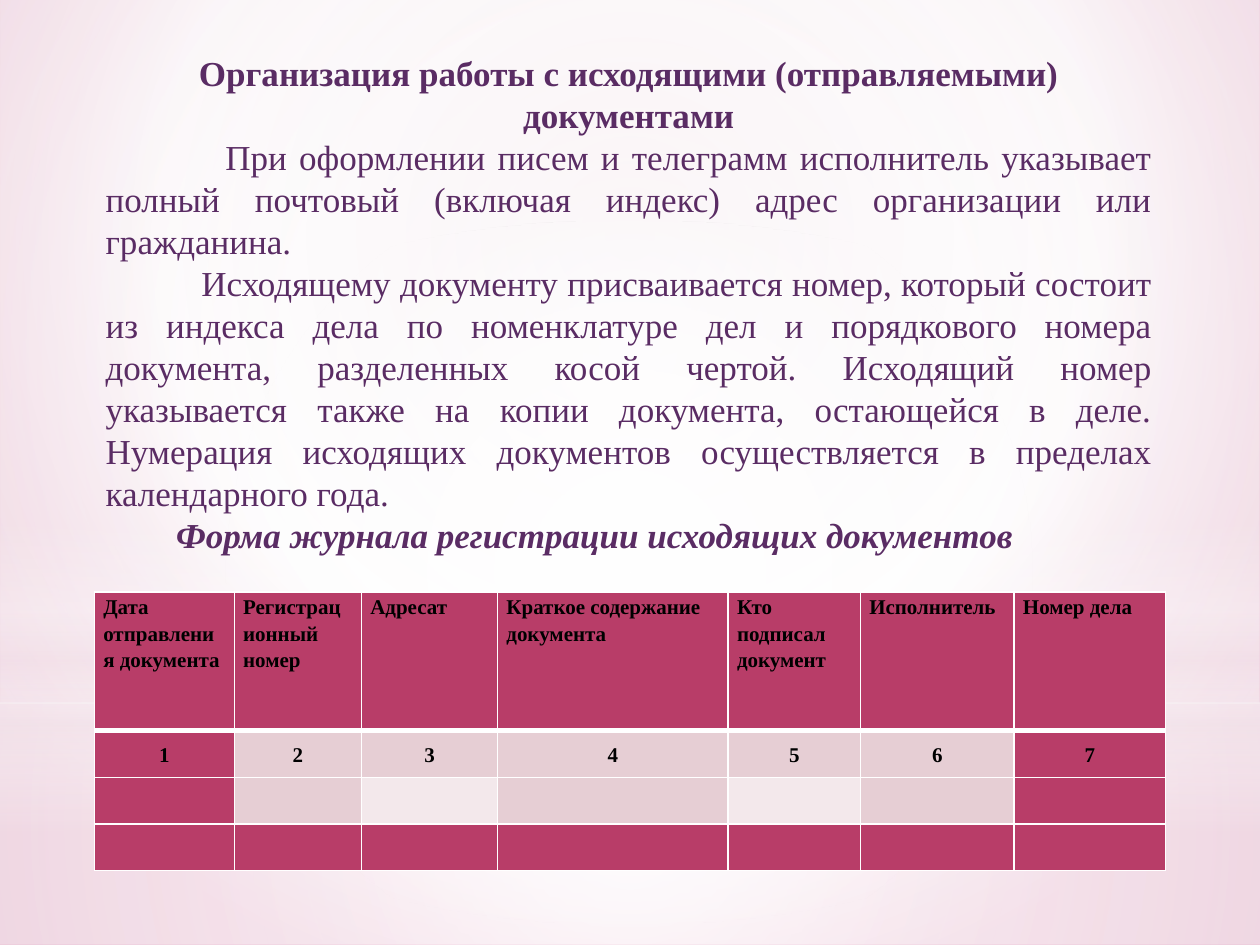
from lxml import etree
from pptx import Presentation
from pptx.dml.color import RGBColor
from pptx.enum.shapes import MSO_SHAPE
from pptx.enum.text import MSO_ANCHOR, PP_ALIGN
from pptx.oxml.ns import qn
from pptx.util import Inches, Pt

RECT, OVAL = MSO_SHAPE.RECTANGLE, MSO_SHAPE.OVAL
CENTER, JUSTIFY, LEFT = PP_ALIGN.CENTER, PP_ALIGN.JUSTIFY, PP_ALIGN.LEFT
MIDDLE, TOP = MSO_ANCHOR.MIDDLE, MSO_ANCHOR.TOP
WHITE = RGBColor(0xFF, 0xFF, 0xFF)
BLACK = RGBColor(0x00, 0x00, 0x00)
PURPLE = RGBColor(0x5A, 0x2C, 0x64)
BLUSH = RGBColor(0xF4, 0xE7, 0xED)
PALE_ROSE = RGBColor(0xED, 0xDA, 0xE2)
ROSE = RGBColor(0xE0, 0x9D, 0xBC)
CRIMSON = RGBColor(0xB8, 0x3D, 0x68)
BAND_DARK = RGBColor(0xE6, 0xCE, 0xD4)
BAND_LIGHT = RGBColor(0xF3, 0xE8, 0xEB)
FONT = "Times New Roman"
MIDPOINT = (50, 50, 50, 50)


def set_gradient(holder, stops, focus):
    """Swap the solid fill for (position, colour, opacity) stops.

    focus is the inner rectangle of a circular gradient, or None for a vertical one.
    """
    gradient = etree.Element(qn("a:gradFill"), rotWithShape="1")
    stop_list = etree.SubElement(gradient, qn("a:gsLst"))
    for position, color, opacity in stops:
        stop = etree.SubElement(stop_list, qn("a:gs"), pos=str(position * 1000))
        tint = etree.SubElement(stop, qn("a:srgbClr"), val=str(color))
        if opacity < 100:
            etree.SubElement(tint, qn("a:alpha"), val=str(opacity * 1000))
    if focus:
        circle = etree.SubElement(gradient, qn("a:path"), path="circle")
        sides = {side: str(share * 1000) for side, share in zip("ltrb", focus)}
        etree.SubElement(circle, qn("a:fillToRect"), **sides)
    else:
        etree.SubElement(gradient, qn("a:lin"), ang="5400000", scaled="0")
    holder.replace(holder.find(qn("a:solidFill")), gradient)


def add_span(para, text, size, color, bold, italic=False):
    span = para.add_run()
    span.text = text
    span.font.name = FONT
    span.font.size = Pt(size)
    span.font.color.rgb = color
    span.font.bold = bold
    span.font.italic = italic


deck = Presentation()
deck.slide_width, deck.slide_height = Inches(10), Inches(7.5)
page = deck.slides.add_slide(deck.slide_layouts[6])

# Background and its soft glows
page.background.fill.solid()
set_gradient(page.element.find(".//" + qn("p:bgPr")),
             [(0, PALE_ROSE, 100), (60, WHITE, 100), (100, ROSE, 100)],
             (20, 10, 20, 60))
GLOWS = [
    (RECT, 5.58, 1.92, MIDPOINT, [(0, WHITE, 91), (37, WHITE, 76), (100, BLUSH, 79)]),
    (RECT, 0, 5.58, MIDPOINT, [(0, WHITE, 89), (48, WHITE, 62), (100, BLUSH, 79)]),
    (RECT, 4.12, 2.5, None, [(0, WHITE, 0), (29, WHITE, 30), (45, BLUSH, 40),
                             (55, WHITE, 26), (65, BLUSH, 60), (100, WHITE, 0)]),
    (OVAL, 1.75, 5.58, MIDPOINT, [(0, WHITE, 100), (56, WHITE, 0)]),
]
for kind, top, height, focus, stops in GLOWS:
    glow = page.shapes.add_shape(kind, 0, Inches(top), Inches(10), Inches(height))
    glow.shadow.inherit = False
    glow.line.fill.background()
    glow.fill.solid()
    set_gradient(glow.element.spPr, stops, focus)

# Heading and body: text, alignment, first-line indent, bold, italic
PARAGRAPHS = [
    ("Организация работы с исходящими (отправляемыми) документами",
     CENTER, 0, True, False),
    ("При оформлении писем и телеграмм исполнитель указывает полный почтовый "
     "(включая индекс) адрес организации или гражданина.",
     JUSTIFY, 0.95, False, False),
    ("Исходящему документу присваивается номер, который состоит из индекса дела "
     "по номенклатуре дел и порядкового номера документа, разделенных косой чертой. "
     "Исходящий номер указывается также на копии документа, остающейся в деле. "
     "Нумерация исходящих документов осуществляется в пределах календарного года.",
     JUSTIFY, 0.76, False, False),
    ("Форма журнала регистрации исходящих документов", JUSTIFY, 0.56, True, True),
]
box = page.shapes.add_textbox(Inches(0.74), Inches(0.36), Inches(8.5), Inches(5.15))
frame = box.text_frame
frame.word_wrap = True
for index, (text, align, indent, bold, italic) in enumerate(PARAGRAPHS):
    para = frame.add_paragraph() if index else frame.paragraphs[0]
    para.alignment = align
    para._p.get_or_add_pPr().set("indent", str(Inches(indent)))
    add_span(para, text, 20, PURPLE, bold, italic)

# Register of outgoing documents
COLUMN_WIDTHS = [1.11, 1.01, 1.08, 1.83, 1.05, 1.22, 1.2]
ROW_HEIGHTS = [1.1, 0.37, 0.37, 0.37]
HEADERS = ["Дата отправления документа", "Регистрационный номер", "Адресат",
           "Краткое содержание документа", "Кто подписал документ",
           "Исполнитель", "Номер дела"]
NUMBERS = [str(number) for number in range(1, len(HEADERS) + 1)]
BLANKS = [""] * len(HEADERS)
ROWS = [HEADERS, NUMBERS, BLANKS, BLANKS]
FILLS = [
    [CRIMSON] * 7,
    [CRIMSON] + [BAND_DARK] * 5 + [CRIMSON],
    [CRIMSON, BAND_DARK, BAND_LIGHT, BAND_DARK, BAND_LIGHT, BAND_DARK, CRIMSON],
    [CRIMSON] * 7,
]
register = page.shapes.add_table(len(ROWS), len(HEADERS), Inches(0.75), Inches(4.7),
                                 Inches(8.5), Inches(2.2)).table
register.horz_banding = False
for column, width in zip(register.columns, COLUMN_WIDTHS):
    column.width = Inches(width)
for row, height in zip(register.rows, ROW_HEIGHTS):
    row.height = Inches(height)

for r, texts in enumerate(ROWS):
    for c, text in enumerate(texts):
        cell = register.cell(r, c)
        cell.margin_left = cell.margin_right = Inches(0.07)
        cell.margin_top = cell.margin_bottom = 0
        cell.vertical_anchor = TOP if r == 0 else MIDDLE
        para = cell.text_frame.paragraphs[0]
        para.alignment = LEFT if r == 0 else CENTER
        para.line_spacing = 1.15
        if text:
            add_span(para, text, 12, BLACK, True)
        else:
            para.font.size = Pt(12)
        properties = cell._tc.get_or_add_tcPr()
        for side in "LRTB":
            under_header = (r, side) in [(0, "B"), (1, "T")]
            edge = etree.SubElement(properties, qn("a:ln" + side),
                                    w=str(Pt(3 if under_header else 1)))
            paint = etree.SubElement(edge, qn("a:solidFill"))
            etree.SubElement(paint, qn("a:srgbClr"), val=str(WHITE))
        cell.fill.solid()
        cell.fill.fore_color.rgb = FILLS[r][c]

deck.save("out.pptx")
